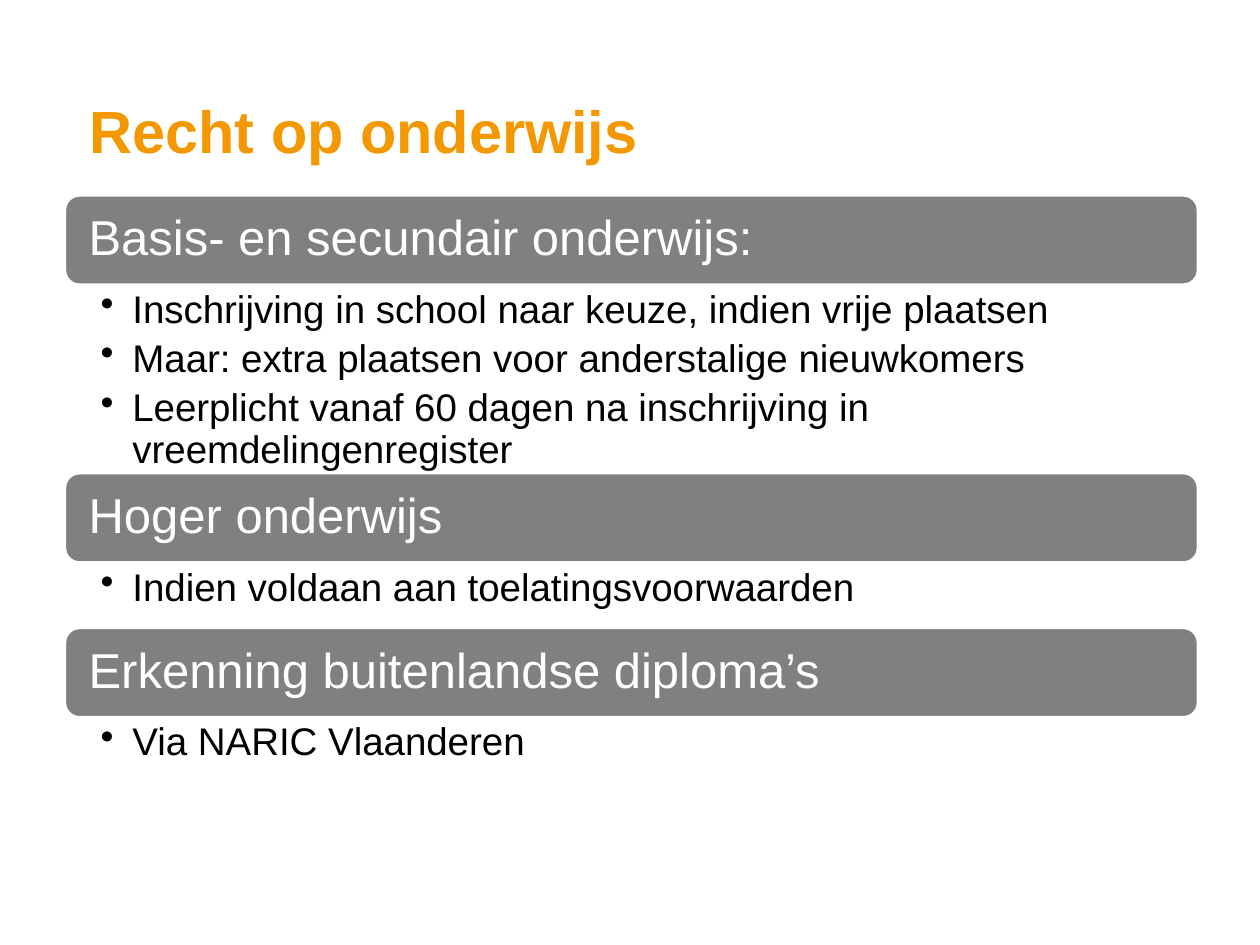
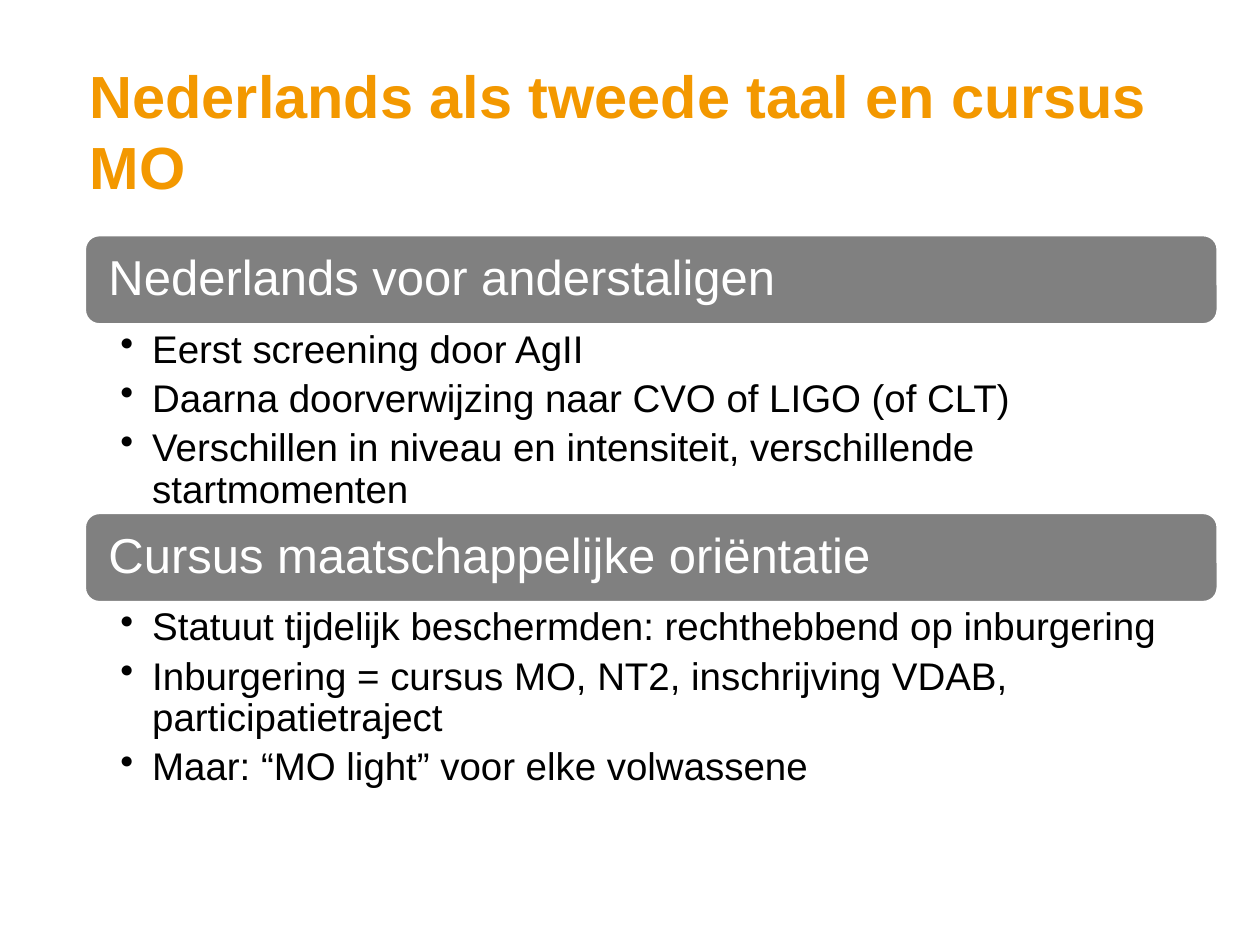
"""Build two slides on education and Dutch lessons, each a title above banded sections."""
from dataclasses import dataclass

from lxml import etree
from pptx import Presentation
from pptx.dml.color import RGBColor
from pptx.enum.shapes import MSO_SHAPE
from pptx.enum.text import MSO_ANCHOR, PP_ALIGN
from pptx.oxml.ns import qn
from pptx.util import Cm, Pt

ROUNDED = MSO_SHAPE.ROUNDED_RECTANGLE
MIDDLE, TOP = MSO_ANCHOR.MIDDLE, MSO_ANCHOR.TOP
LEFT = PP_ALIGN.LEFT

FONT = "Arial"
ORANGE, GREY, WHITE, BLACK = "F39800", "808080", "FFFFFF", "000000"
TITLE_LEFT, TITLE_TOP, TITLE_WIDTH, TITLE_HEIGHT = 1.3, 1.17, 22.2, 2.9
TITLE_INDENT, BULLET_INDENT = 0.51, 0.64
BAND_WIDTH, BAND_HEIGHT = 22.86, 1.82
TALL_BODY, SHORT_BODY = 3.78, 1.3


@dataclass(frozen=True)
class Section:
    """A heading band and the bullets below it."""
    heading: str
    bullets: tuple[str, ...]
    body_height: float = TALL_BODY


@dataclass(frozen=True)
class Page:
    """A title and the sections stacked from a corner in centimetres."""
    title: str
    left: float
    top: float
    sections: tuple[Section, ...]


@dataclass(frozen=True)
class TextStyle:
    """The look of the text in one kind of box."""
    size: float
    color: str
    bold: bool = False
    line_spacing: float = 1.0
    space_after: float = 0
    anchor: MSO_ANCHOR = MIDDLE
    insets: tuple[float, float, float, float] = (0, 0, 0, 0)
    indent: float = 0
    bullet: str = ""


TITLE_STYLE = TextStyle(34, ORANGE, bold=True, indent=TITLE_INDENT)
HEADING_STYLE = TextStyle(28, WHITE, line_spacing=0.9, insets=(0.4, 0.3, 0.4, 0.3))
BULLET_STYLE = TextStyle(22, BLACK, line_spacing=0.9, space_after=4.4, anchor=TOP,
                         insets=(0.73, 0.1, 0.56, 0.1), indent=BULLET_INDENT, bullet="•")

PAGES = (
    Page("Recht op onderwijs", 1.3, 3.93, (
        Section("Basis- en secundair onderwijs:", (
            "Inschrijving in school naar keuze, indien vrije plaatsen",
            "Maar: extra plaatsen voor anderstalige nieuwkomers",
            "Leerplicht vanaf 60 dagen na inschrijving in vreemdelingenregister")),
        Section("Hoger onderwijs", ("Indien voldaan aan toelatingsvoorwaarden",), SHORT_BODY),
        Section("Erkenning buitenlandse diploma’s", ("Via NARIC Vlaanderen",), SHORT_BODY))),
    Page("Nederlands als tweede taal en cursus MO", 1.7, 4.73, (
        Section("Nederlands voor anderstaligen", (
            "Eerst screening door AgII",
            "Daarna doorverwijzing naar CVO of LIGO (of CLT)",
            "Verschillen in niveau en intensiteit, verschillende startmomenten")),
        Section("Cursus maatschappelijke oriëntatie", (
            "Statuut tijdelijk beschermden: rechthebbend op inburgering",
            "Inburgering = cursus MO, NT2, inschrijving VDAB, participatietraject",
            "Maar: “MO light” voor elke volwassene")))),
)


def rgb(color: str) -> RGBColor:
    """Turn a hex string into a colour."""
    return RGBColor.from_string(color)


def write_text(box, lines: tuple[str, ...], style: TextStyle) -> None:
    """Fill a box with one styled paragraph per line."""
    frame = box.text_frame
    frame.text = "\n".join(lines)
    frame.word_wrap = True
    frame.vertical_anchor = style.anchor
    (frame.margin_left, frame.margin_top,
     frame.margin_right, frame.margin_bottom) = map(Cm, style.insets)
    for para in frame.paragraphs:
        properties = para._p.get_or_add_pPr()
        properties.set("marL", str(Cm(style.indent)))
        if style.bullet:
            properties.set("indent", str(-Cm(style.indent)))
            etree.SubElement(properties, qn("a:buChar"), char=style.bullet)
        para.alignment = LEFT
        para.line_spacing = style.line_spacing
        para.space_after = Pt(style.space_after)
        for span in para.runs:
            span.font.name = FONT
            span.font.size = Pt(style.size)
            span.font.bold = style.bold
            span.font.color.rgb = rgb(style.color)


def add_text(slide, left: float, top: float, width: float, height: float,
             lines: tuple[str, ...], style: TextStyle) -> None:
    """Place a text box given in centimetres."""
    box = slide.shapes.add_textbox(Cm(left), Cm(top), Cm(width), Cm(height))
    write_text(box, lines, style)


def add_band(slide, left: float, top: float, heading: str) -> None:
    """Place a rounded heading band."""
    band = slide.shapes.add_shape(ROUNDED, Cm(left), Cm(top), Cm(BAND_WIDTH), Cm(BAND_HEIGHT))
    band.shadow.inherit = False
    band.fill.solid()
    band.fill.fore_color.rgb = rgb(GREY)
    band.line.color.rgb = rgb(WHITE)
    band.line.width = Pt(2)
    write_text(band, (heading,), HEADING_STYLE)


def add_page(deck, page: Page) -> None:
    """Add a slide with its title and stacked sections."""
    slide = deck.slides.add_slide(deck.slide_layouts[6])
    add_text(slide, TITLE_LEFT, TITLE_TOP, TITLE_WIDTH, TITLE_HEIGHT, (page.title,), TITLE_STYLE)
    top = page.top
    for section in page.sections:
        add_band(slide, page.left, top, section.heading)
        top += BAND_HEIGHT
        add_text(slide, page.left, top, BAND_WIDTH, section.body_height,
                 section.bullets, BULLET_STYLE)
        top += section.body_height


def main() -> None:
    """Build and save the deck."""
    deck = Presentation()
    deck.slide_width, deck.slide_height = Cm(25.4), Cm(19.05)
    for page in PAGES:
        add_page(deck, page)
    deck.save("out.pptx")


if __name__ == "__main__":
    main()
